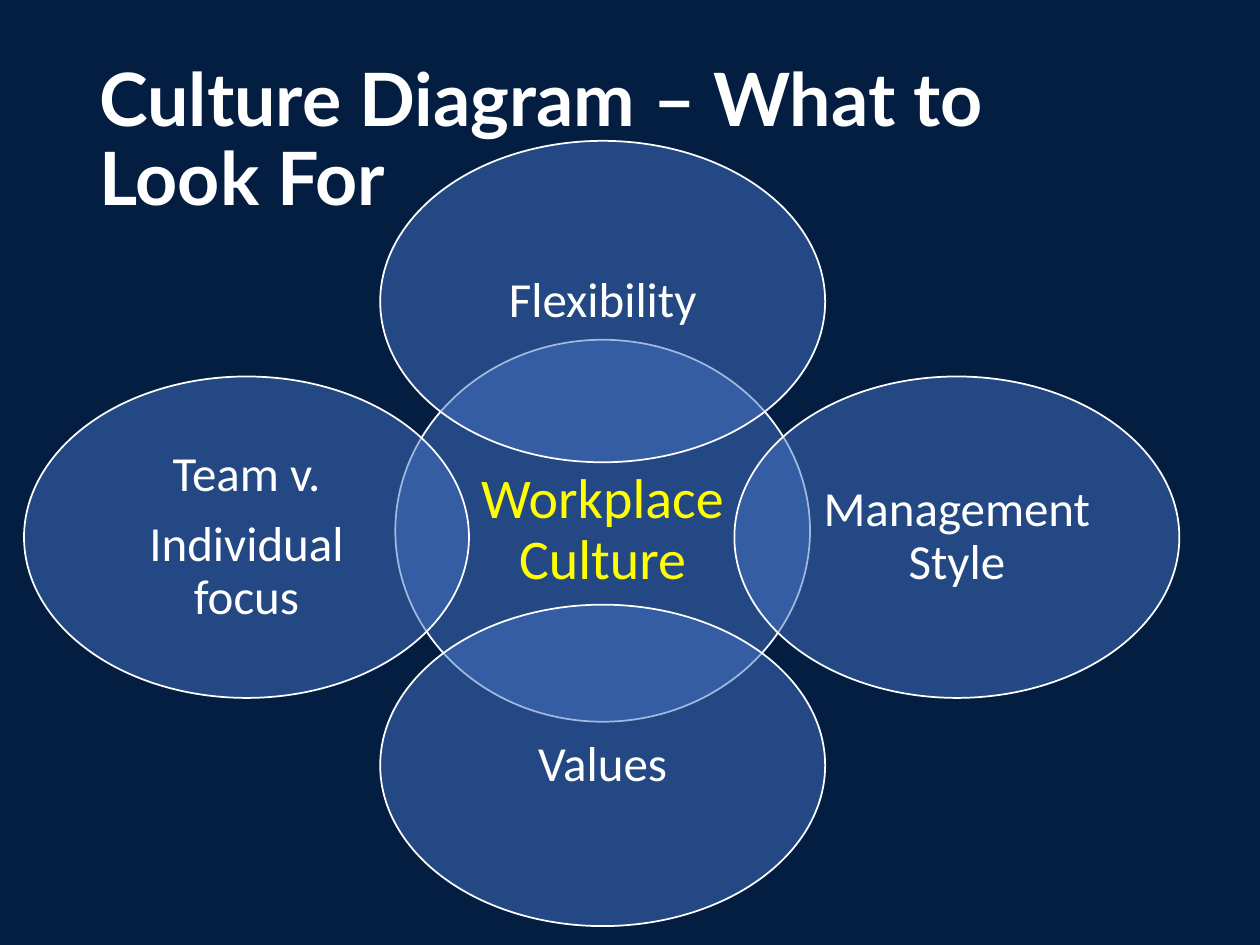
from pptx import Presentation
from pptx.dml.color import RGBColor
from pptx.enum.shapes import MSO_SHAPE
from pptx.enum.text import MSO_ANCHOR, MSO_AUTO_SIZE, PP_ALIGN
from pptx.oxml.ns import qn
from pptx.util import Cm, Pt
from lxml.etree import SubElement

COLOURS = {
    "background": "041E42",
    "circle": "4472C4",
    "text": "FFFFFF",
    "highlight": "FFFF00",
}
TITLE_ONLY = 5


def colour(name):
    return RGBColor.from_string(COLOURS[name])


def write_text(frame, text, font="Calibri", size=28, ink="text", bold=False,
               align=PP_ALIGN.CENTER, space_after=0.0):
    """Fill a text frame, one paragraph a line; space_after is a share of size."""
    frame.word_wrap = True
    frame.auto_size = MSO_AUTO_SIZE.NONE
    frame.vertical_anchor = MSO_ANCHOR.MIDDLE
    frame.text = text
    for paragraph in frame.paragraphs:
        paragraph.alignment = align
        paragraph.line_spacing = 0.9
        paragraph.space_before = Pt(0)
        paragraph.space_after = Pt(size * space_after)
        for run in paragraph.runs:
            run.font.name = font
            run.font.size = Pt(size)
            run.font.bold = bold
            run.font.color.rgb = colour(ink)


class CultureSlide:
    inset = Cm(0.1)
    line_width = Pt(1)
    opacity = 50

    def __init__(self, presentation):
        self.slide = presentation.slides.add_slide(
            presentation.slide_layouts[TITLE_ONLY])
        fill = self.slide.background.fill
        fill.solid()
        fill.fore_color.rgb = colour("background")

    def title(self, text, left, top, width, height):
        shape = self.slide.shapes.title
        shape.left, shape.top = Cm(left), Cm(top)
        shape.width, shape.height = Cm(width), Cm(height)
        write_text(shape.text_frame, text, font="Lato", size=42, bold=True,
                   align=PP_ALIGN.LEFT)

    def circle(self, text, centre_x, centre_y, width, height, **text_format):
        shape = self.slide.shapes.add_shape(
            MSO_SHAPE.OVAL, Cm(centre_x - width / 2), Cm(centre_y - height / 2),
            Cm(width), Cm(height))
        shape.shadow.inherit = False
        shape.fill.solid()
        shape.fill.fore_color.rgb = colour("circle")
        fill_colour = shape._element.spPr.find(qn("a:solidFill"))[0]
        SubElement(fill_colour, qn("a:alpha"), val=str(self.opacity * 1000))
        shape.line.color.rgb = colour("text")
        shape.line.width = self.line_width
        frame = shape.text_frame
        frame.margin_left = frame.margin_right = self.inset
        frame.margin_top = frame.margin_bottom = self.inset
        write_text(frame, text, space_after=0.35, **text_format)


def main():
    presentation = Presentation()
    presentation.slide_width, presentation.slide_height = Cm(25.4), Cm(19.05)

    culture = CultureSlide(presentation)
    culture.title("Culture Diagram – What to Look For", 1.75, 1.02, 21.89, 3.68)

    middle_x, side_y = 12.15, 10.83
    culture.circle("Workplace Culture", middle_x, 10.7, 8.36, 7.7,
                   size=32, ink="highlight")
    factors = [
        ("Flexibility", middle_x, 6.08),
        ("Management Style", 19.29, side_y),
        ("Values", middle_x, 15.43),
        ("Team v.\nIndividual focus", 4.97, side_y),
    ]
    for text, centre_x, centre_y in factors:
        culture.circle(text, centre_x, centre_y, 8.97, 6.48)

    presentation.save("out.pptx")


if __name__ == "__main__":
    main()
